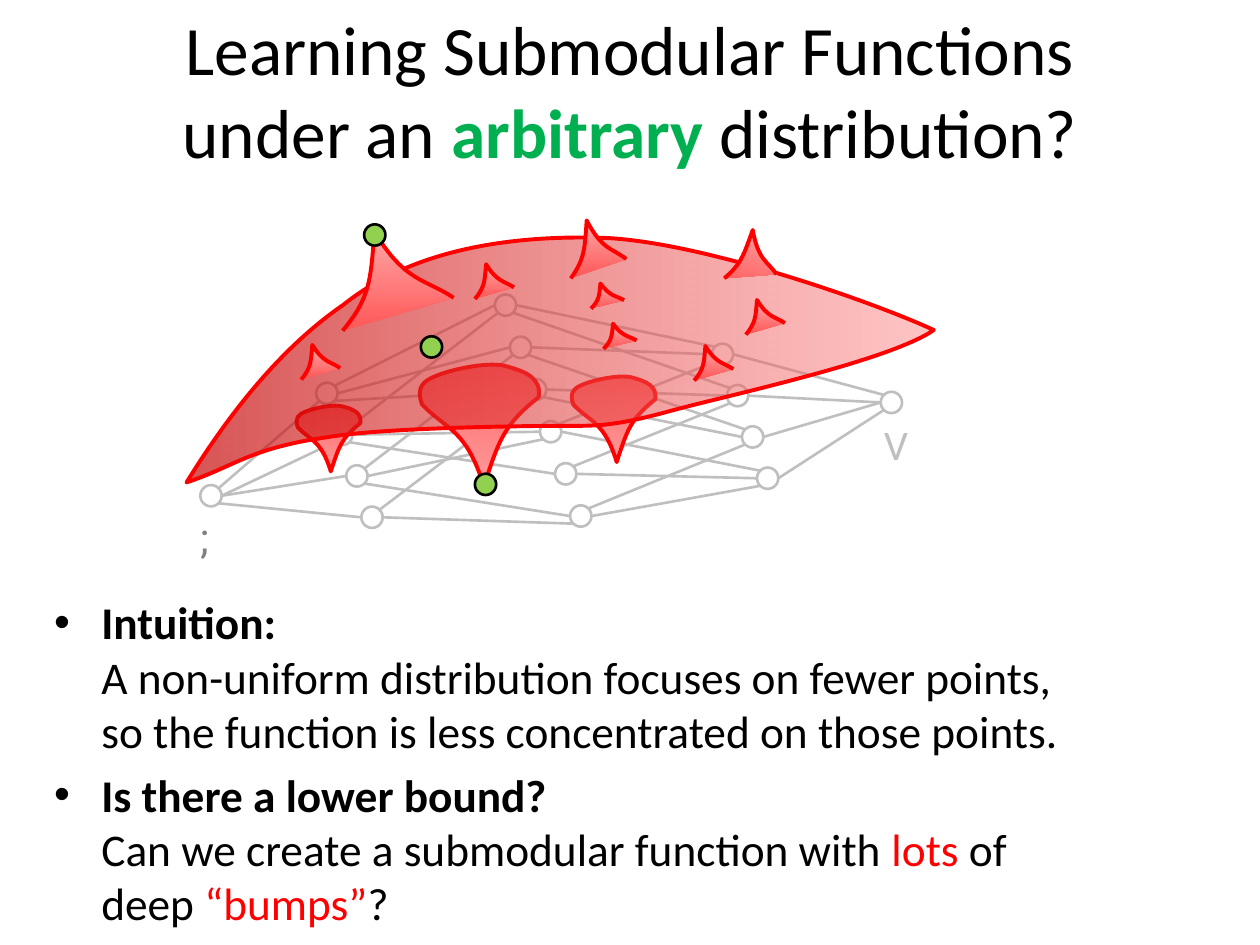
"""Build a slide about learning submodular functions under an arbitrary distribution."""
from dataclasses import dataclass
from typing import NamedTuple

from lxml import etree
from pptx import Presentation
from pptx import util as u
from pptx.dml.color import RGBColor
from pptx.enum import shapes, text
from pptx.oxml import ns

COLORS = {
    "black": "000000", "green": "00B050", "red": "FF0000", "gray": "808080",
    "lattice": "BFBFBF", "sample": "92D050", "spike_base": "FF5757",
    "spike_tip": "FFA7A7", "surface_left": "C40000", "surface_right": "FF7D7D",
}
FONT = "Calibri"
DOT = 12.2
SURFACE = [
    (0, 100), (6.6, 93.4), (8.3, 86.3), (19, 81.7), (27, 77.7), (47, 77.2), (50.6, 77.2),
    (54.5, 77.2), (57, 77.7), (65, 71), (73, 64.5), (94, 51), (100, 38.6),
    (92, 27.4), (69.5, 3.6), (56.3, 1.5), (43, 0), (30, 6.6), (21, 28.4),
    (12, 47), (5, 75.6), (0, 100),
]
SPIKE = [(0, 100), (25, 66), (25, 50), (28.7, 0), (57, 52), (75, 47.5), (100, 66.7)]
BUMP = [
    (0, 80.5), (22.5, 52.3), (23.6, 39.4), (26.8, 0), (51.8, 42.2), (67.6, 37.4),
    (91.5, 52.8), (100, 65.3), (95, 71.9), (85, 78.5), (74.1, 86.3), (45.5, 100),
    (30.4, 98.7), (15.5, 98), (1.2, 96.1), (0, 80.5),
]
SITES = {
    "E": (1, 0), "W": (-1, 0), "NE": (0.71, -0.71), "NW": (-0.71, -0.71),
    "SE": (0.71, 0.71), "SW": (-0.71, 0.71),
}
EDGES = """
a0 NE b0 SW, a0 E b1 SW, a0 E b2 W, a0 SE b3 W,
b0 NE c0 W, b0 E c1 W, b0 SE c2 W, b1 NE c0 SW, b1 E c3 W, b1 SE c4 W,
b2 NE c1 SW, b2 E c3 SW, b2 SE c5 W, b3 NE c2 SW, b3 E c5 SW,
c0 E d0 NW, c0 SE d1 NW, c1 E d0 W, c1 SE d2 NW, c2 E d1 W, c2 SE d2 W,
c3 NE d0 SW, c3 E d3 NW, c4 NE d1 SW, c4 E d3 W, c5 NE d2 SW, c5 E d3 SW,
d0 E e0 NW, d1 E e0 W, d2 E e0 W, d3 E e0 SW
"""


class Frame(NamedTuple):
    left: float
    top: float
    width: float
    height: float


class Span(NamedTuple):
    words: str
    color: str = "black"
    bold: bool = False


class Level(NamedTuple):
    name: str
    left: float
    top: float
    count: int
    step: float = 23.6


@dataclass(frozen=True)
class Paint:
    start: str
    end: str
    angle: float
    opacity: tuple[int, int] = (100, 100)


@dataclass(frozen=True)
class Outline:
    points: list
    frame: Frame
    paint: Paint
    rotation: float = 0


LEVELS = [
    Level("a", 114.5, 277.2, 1), Level("b", 180.7, 218.7, 4),
    Level("c", 282.8, 168.3, 6, 24.1), Level("d", 406.8, 196.4, 4), Level("e", 503.3, 223.9, 1),
]
SPIKE_PAINT = Paint("spike_base", "spike_tip", 90)
SURFACE_PAINT = Paint("surface_left", "surface_right", 0, (67, 45))
BUMP_FRAMES = [
    Frame(234, 204.5, 69.8, 70.6), Frame(322.6, 212.4, 49, 49.7), Frame(166.3, 229.7, 37.4, 38.2),
]
SPIKE_FRAMES = [
    Frame(195.8, 132.5, 63.4, 56.5), Frame(326.2, 126, 31.7, 33.1),
    *[Frame(left, top, 22.3, 19.8) for left, top in
      [(271.4, 151), (172.1, 197.1), (396.7, 197.7), (426.2, 171.4)]],
    *[Frame(left, top, 18.9, 14.4) for left, top in [(337.7, 162), (344.9, 185)]],
]
OUTLINES = [
    *[Outline(BUMP, frame, SPIKE_PAINT, 193.4) for frame in BUMP_FRAMES],
    Outline(SURFACE, Frame(106.6, 133.9, 427, 141.8), SURFACE_PAINT),
    *[Outline(SPIKE, frame, SPIKE_PAINT) for frame in SPIKE_FRAMES],
    Outline(SPIKE, Frame(417.6, 132.5, 28.1, 31), SPIKE_PAINT, 15.9),
]
SAMPLES = [(208.1, 128.2), (271.4, 270.7), (240.5, 192.2)]
TITLE = [Span("Learning Submodular Functions\nunder an "), Span("arbitrary", "green", True),
         Span(" distribution?")]
BODY = [
    [Span("Intuition:\n", bold=True),
     Span("A non-uniform distribution focuses on fewer points,\n"
          "so the function is less concentrated on those points.")],
    [Span("Is there a lower bound?\n", bold=True),
     Span("Can we create a submodular function with "), Span("lots", "red"),
     Span(" of\ndeep "), Span("“bumps”", "red"), Span("?")],
]


def rgb(name: str) -> RGBColor:
    """Look up a named colour."""
    return RGBColor.from_string(COLORS[name])


def set_line(shape, color: str, width: float) -> None:
    """Give a shape or connector a plain line."""
    shape.line.color.rgb = rgb(color)
    shape.line.width = u.Pt(width)


def add_text(page, frame: Frame, paragraphs: list, size: float, font: str = FONT,
             wrap: bool = True, bullets: bool = False):
    """Add a text box of styled spans and return its text frame."""
    body = page.shapes.add_textbox(*map(u.Pt, frame)).text_frame
    body.word_wrap = wrap
    body.auto_size = text.MSO_AUTO_SIZE.NONE if wrap else text.MSO_AUTO_SIZE.SHAPE_TO_FIT_TEXT
    for index, spans in enumerate(paragraphs):
        para = body.add_paragraph() if index else body.paragraphs[0]
        if bullets:
            para.space_before = u.Pt(size * 0.2)
            properties = para._p.get_or_add_pPr()
            properties.set("marL", str(u.Pt(27)))
            properties.set("indent", str(u.Pt(-27)))
            etree.SubElement(properties, ns.qn("a:buFont")).set("typeface", "Arial")
            etree.SubElement(properties, ns.qn("a:buChar")).set("char", "•")
        para.font.name, para.font.size = font, u.Pt(size)
        for span in spans:
            for number, words in enumerate(span.words.split("\n")):
                if number:
                    para.add_line_break()
                if words:
                    run = para.add_run()
                    run.text = words
                    run.font.bold = span.bold
                    run.font.color.rgb = rgb(span.color)
    return body


def add_dot(group, left: float, top: float, line: str, fill: str | None = None) -> None:
    """Add a small circle, hollow unless a fill is named."""
    dot = group.shapes.add_shape(shapes.MSO_SHAPE.OVAL, *map(u.Pt, (left, top, DOT, DOT)))
    dot.shadow.inherit = False
    if fill:
        dot.fill.solid()
        dot.fill.fore_color.rgb = rgb(fill)
    else:
        dot.fill.background()
    set_line(dot, line, 1.5)


def add_lattice(page) -> None:
    """Add the grouped subset lattice, its nodes first and then its edges."""
    group = page.shapes.add_group_shape()
    nodes = {f"{level.name}{row}": (level.left + 8.6 * row, level.top + level.step * row)
             for level in LEVELS for row in range(level.count)}
    for left, top in nodes.values():
        add_dot(group, left, top, "lattice")
    for edge in EDGES.split(","):
        start, start_site, end, end_site = edge.split()
        ends = [u.Pt(corner + DOT / 2 * (1 + shift))
                for node, site in ((start, start_site), (end, end_site))
                for corner, shift in zip(nodes[node], SITES[site])]
        line = group.shapes.add_connector(shapes.MSO_CONNECTOR.STRAIGHT, *ends)
        set_line(line, "lattice", 1.5)
        etree.SubElement(line._element.spPr, ns.qn("a:effectLst"))


def add_outline(page, outline: Outline) -> None:
    """Add a gradient shape whose percent points form cubic curves."""
    frame, paint = outline.frame, outline.paint
    points = [(u.Pt(frame.left + frame.width * x / 100), u.Pt(frame.top + frame.height * y / 100))
              for x, y in outline.points]
    builder = page.shapes.build_freeform(*points[0])
    builder.add_line_segments(points[1:], close=points[0] == points[-1])
    shape = builder.convert_to_shape()
    segments = list(shape._element.iter(ns.qn("a:lnTo")))
    for first in range(0, len(segments), 3):
        curve = etree.Element(ns.qn("a:cubicBezTo"))
        segments[first].addprevious(curve)
        for segment in segments[first:first + 3]:
            curve.append(segment[0])
            segment.getparent().remove(segment)
    shape.shadow.inherit = False
    shape.rotation = outline.rotation
    shape.fill.gradient()
    shape.fill.gradient_angle = paint.angle
    for stop, color in zip(shape.fill.gradient_stops, (paint.start, paint.end)):
        stop.color.rgb = rgb(color)
    for color, opacity in zip(shape._element.spPr.iter(ns.qn("a:srgbClr")), paint.opacity):
        if opacity < 100:
            etree.SubElement(color, ns.qn("a:alpha")).set("val", str(opacity * 1000))
    set_line(shape, "red", 2.25)


def main() -> None:
    """Build and save the deck."""
    deck = Presentation()
    deck.slide_width, deck.slide_height = u.Pt(720), u.Pt(540)
    page = deck.slides.add_slide(deck.slide_layouts[6])
    title = add_text(page, Frame(36, 12.2, 648, 77.8), [TITLE], 39.6)
    title.vertical_anchor = text.MSO_ANCHOR.MIDDLE
    title.paragraphs[0].alignment = text.PP_ALIGN.CENTER
    add_text(page, Frame(23.8, 336.2, 678.2, 192.2), BODY, 25.9, bullets=True)
    add_lattice(page)
    add_text(page, Frame(107.3, 288.7, 26.6, 36), [[Span(";", "gray")]], 24, "Roboto", wrap=False)
    add_text(page, Frame(498.2, 235.4, 28.1, 36), [[Span("V", "lattice")]], 24, wrap=False)
    for outline in OUTLINES:
        add_outline(page, outline)
    samples = page.shapes.add_group_shape()
    for left, top in SAMPLES:
        add_dot(samples, left, top, "black", "sample")
    deck.save("out.pptx")


if __name__ == "__main__":
    main()
